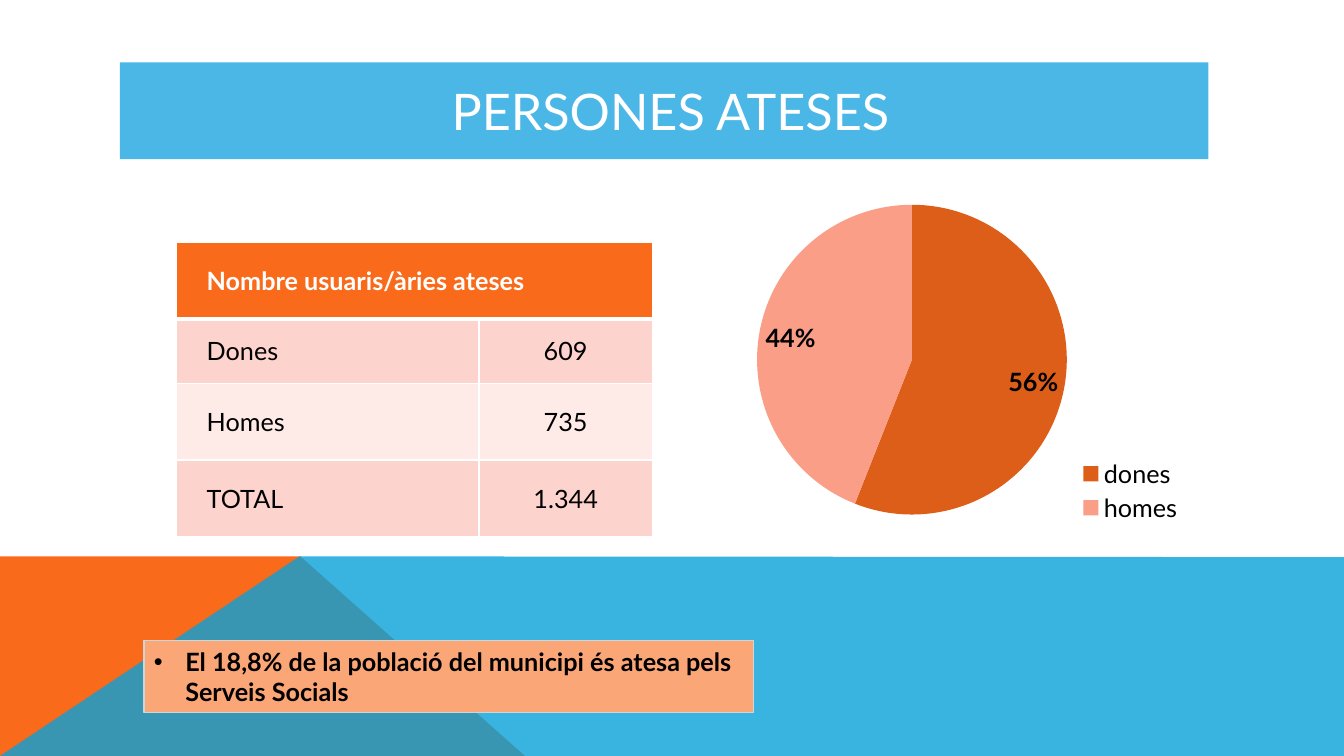
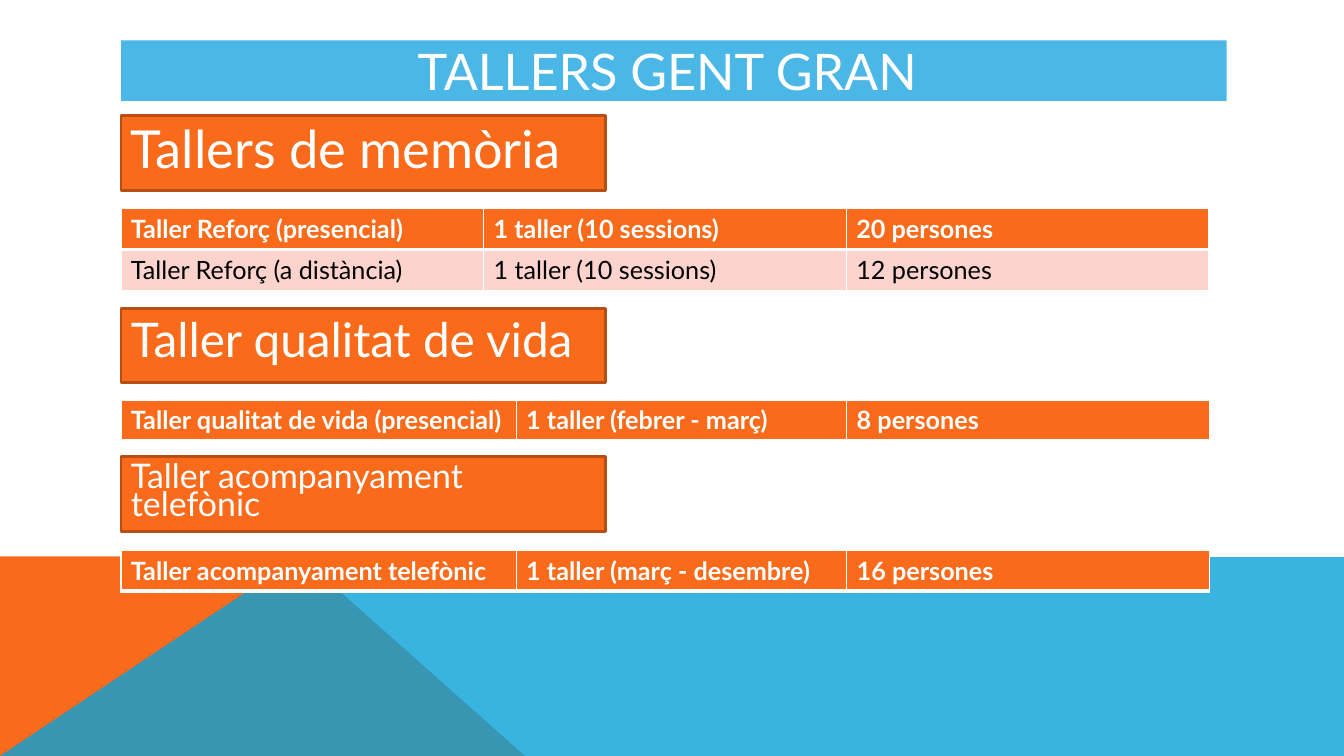
from lxml import etree
from pptx import Presentation
from pptx import util as u
from pptx.chart.data import CategoryChartData
from pptx.dml.color import RGBColor
from pptx.enum import chart as ch, shapes, text
from pptx.oxml import parse_xml
from pptx.oxml.ns import nsdecls, qn

ORANGE = RGBColor(0xF9, 0x6A, 0x1B)
DARK_ORANGE = RGBColor(0xB8, 0x4E, 0x14)
PIE_ORANGE = RGBColor(0xDD, 0x5E, 0x18)
SALMON = RGBColor(0xFA, 0x9E, 0x88)
PEACH = RGBColor(0xFB, 0xA6, 0x76)
PINK = RGBColor(0xFD, 0xD4, 0xCD)
PALE_PINK = RGBColor(0xFE, 0xEB, 0xE8)
SKY = RGBColor(0x4B, 0xB7, 0xE7)
BLUE = RGBColor(0x08, 0xA1, 0xD9)
GREY = RGBColor(0xCD, 0xD7, 0xD9)
WHITE = RGBColor(0xFF, 0xFF, 0xFF)
BLACK = RGBColor(0, 0, 0)
FONT = "Lato"
LEFT, CENTER = text.PP_ALIGN.LEFT, text.PP_ALIGN.CENTER
MIDDLE, TOP = text.MSO_ANCHOR.MIDDLE, text.MSO_ANCHOR.TOP


def write(frame, words, size, color, bold=False, align=LEFT):
    """Fill a text frame with one formatted paragraph and return it."""
    paragraph = frame.paragraphs[0]
    paragraph.alignment = align
    run = paragraph.add_run()
    run.text = words
    for name, value in dict(name=FONT, size=u.Pt(size), bold=bold).items():
        setattr(run.font, name, value)
    run.font.color.rgb = color
    return paragraph


def add_grid(slide, left, top, widths, heights, rows, margin=0.25, anchor=TOP, number_align=LEFT):
    """Add a table with an orange header row, banded body and white borders."""
    frame = slide.shapes.add_table(len(rows), len(widths), u.Cm(left), u.Cm(top),
                                   u.Cm(sum(widths)), u.Cm(sum(heights)))
    grid = frame.table
    for column, width in zip(grid.columns, widths):
        column.width = u.Cm(width)
    for r, (row, height) in enumerate(zip(rows, heights)):
        grid.rows[r].height = u.Cm(height)
        header = r == 0
        for c, words in enumerate(row):
            cell = grid.cell(r, c)
            cell.margin_left = cell.margin_right = u.Cm(margin)
            cell.vertical_anchor = anchor
            cell.fill.solid()
            cell.fill.fore_color.rgb = ORANGE if header else (PALE_PINK, PINK)[r % 2]
            if words:
                write(cell.text_frame, words, 18, WHITE if header else BLACK, header,
                      number_align if c else LEFT)
            properties = cell._tc.get_or_add_tcPr()
            for i, side in enumerate("LRTB"):
                width = 3 if (header and side == "B") or (r == 1 and side == "T") else 1
                properties.insert(i, parse_xml(
                    f'<a:ln{side} {nsdecls("a")} w="{u.Pt(width)}"><a:solidFill>'
                    f'<a:srgbClr val="{WHITE}"/></a:solidFill></a:ln{side}>'))
    return grid


prs = Presentation()
prs.slide_width, prs.slide_height = u.Cm(33.87), u.Cm(19.05)
layout = prs.slide_layouts[5]

# Titles
titles = [
    (" PERSONES ATESES", 3.02, 1.57, 27.43, 2.44),
    ("TALLERS GENT GRAN ", 3.05, 1.02, 27.86, 1.52),
]
slides = []
for words, left, top, width, height in titles:
    slide = prs.slides.add_slide(layout)
    title = slide.shapes.title
    place = dict(left=left, top=top, width=width, height=height)
    for name, value in place.items():
        setattr(title, name, u.Cm(value))
    title.fill.solid()
    title.fill.fore_color.rgb = SKY
    title.text_frame.vertical_anchor = MIDDLE
    title.text_frame.auto_size = text.MSO_AUTO_SIZE.NONE
    write(title.text_frame, words, 36, WHITE, align=CENTER)
    slides.append(slide)
people, workshops = slides

# Bottom bands, drawn once and moved to the shared layout
bands = [
    (ORANGE, 100, [(0, 19.05), (0, 14.02), (7.57, 14.02), (13.23, 19.05)]),
    (BLUE, 80, [(0, 19.05), (7.55, 14.02), (33.87, 14.04), (33.87, 19.05)]),
]
for i, (color, opacity, points) in enumerate(bands):
    corners = [(u.Cm(x), u.Cm(y)) for x, y in points]
    builder = people.shapes.build_freeform(*corners[0])
    builder.add_line_segments(corners[1:], close=True)
    band = builder.convert_to_shape()
    band.shadow.inherit = False
    band.line.fill.background()
    band.fill.solid()
    band.fill.fore_color.rgb = color
    tint = band.element.spPr.find(".//" + qn("a:srgbClr"))
    etree.SubElement(tint, qn("a:alpha"), val=str(opacity * 1000))
    layout.shapes.element.insert(2 + i, band.element)

# Tables
users = add_grid(people, 4.45, 6.1, [7.62, 4.37], [1.93, 1.63, 1.93, 1.93], [
    ("Nombre usuaris/àries ateses", ""),
    ("Dones", "609"),
    ("Homes", "735"),
    ("TOTAL", "1.344"),
], margin=0.76, anchor=MIDDLE, number_align=CENTER)
users.cell(0, 0).merge(users.cell(0, 1))

EVEN, UNEVEN = [9.14, 9.14, 9.14], [9.96, 8.33, 9.14]
sessions = [
    (5.26, EVEN, [("Taller Reforç (presencial)", "1 taller (10 sessions)", "20 persones"),
                  ("Taller Reforç (a distància)", "1 taller (10 sessions)", "12 persones")]),
    (10.08, UNEVEN, [("Taller qualitat de vida (presencial)", "1 taller (febrer - març)",
                      "8 persones")]),
    (13.87, UNEVEN, [("Taller acompanyament telefònic", "1 taller (març - desembre)",
                      "16 persones")]),
]
for top, widths, rows in sessions:
    add_grid(workshops, 3.05, top, widths, [1.03] * len(rows), rows)

# Pie of women and men
data = CategoryChartData()
data.categories = ["dones", "homes"]
data.add_series("Series 1", (56, 44))
pie = people.shapes.add_chart(ch.XL_CHART_TYPE.PIE, u.Cm(16.43), u.Cm(3.56),
                              u.Cm(16.18), u.Cm(10.01), data).chart
pie.has_title = False
pie.has_legend = True
pie.legend.position = ch.XL_LEGEND_POSITION.RIGHT
pie.legend.include_in_layout = False
plot = pie.plots[0]
plot.vary_by_categories = True
plot.has_data_labels = True
labels = plot.data_labels
label_format = dict(show_percentage=True, show_value=False, number_format="0%",
                    number_format_is_linked=False,
                    position=ch.XL_LABEL_POSITION.BEST_FIT)
for name, value in label_format.items():
    setattr(labels, name, value)
for font, bold in ((pie.font, False), (pie.legend.font, False), (labels.font, True)):
    font.name, font.size, font.bold = FONT, u.Pt(18), bold
    font.color.rgb = BLACK
for i, color in enumerate((PIE_ORANGE, SALMON)):
    sector = plot.series[0].points[i].format
    sector.fill.solid()
    sector.fill.fore_color.rgb = color
    sector.line.fill.background()

plot_area = pie._chartSpace.chart.plotArea
for old in plot_area.findall(qn("c:layout")):
    plot_area.remove(old)
legend = pie.legend._element
for old in legend.findall(qn("c:layout")):
    legend.remove(old)
for parent, index, target, box in (
        (plot_area, 0, '<c:layoutTarget val="inner"/>', (0.15, 0.16, 0.51, 0.78)),
        (legend, 1, "", (0.65, 0.79, 0.19, 0.18))):
    sizes = "".join(f'<c:{k} val="{v}"/>' for k, v in zip("xywh", box))
    parent.insert(index, parse_xml(
        f'<c:layout {nsdecls("c")}><c:manualLayout>{target}<c:xMode val="edge"/>'
        f'<c:yMode val="edge"/>{sizes}</c:manualLayout></c:layout>'))

# Note and workshop headings
NOTE = dict(fill=PEACH, line=GREY, weight=0.75, color=BLACK, bold=True)
HEADING = dict(fill=ORANGE, line=DARK_ORANGE, weight=2, color=WHITE, bold=False)
boxes = [
    (people, NOTE, 3.63, 16.15, 15.37, 1.8, 18, 1,
     "El 18,8% de la població del municipi és atesa pels Serveis Socials"),
    (workshops, HEADING, 3.05, 2.92, 12.22, 1.88, 37.4, 0.8, "Tallers de memòria"),
    (workshops, HEADING, 3.05, 7.77, 12.22, 1.88, 34.1, 0.7, "Taller qualitat de vida"),
    (workshops, HEADING, 3.05, 11.51, 12.22, 1.88, 24.2, 0.7, "Taller acompanyament telefònic"),
]
for slide, style, left, top, width, height, size, spacing, words in boxes:
    box = slide.shapes.add_shape(shapes.MSO_SHAPE.RECTANGLE, u.Cm(left), u.Cm(top),
                                 u.Cm(width), u.Cm(height))
    box.shadow.inherit = False
    box.fill.solid()
    box.fill.fore_color.rgb = style["fill"]
    box.line.color.rgb = style["line"]
    box.line.width = u.Pt(style["weight"])
    box.text_frame.word_wrap = True
    box.text_frame.vertical_anchor = MIDDLE
    paragraph = write(box.text_frame, words, size, style["color"], style["bold"])
    paragraph.line_spacing = spacing
    if style is NOTE:
        properties = paragraph._p.get_or_add_pPr()
        properties.set("marL", str(u.Cm(0.79)))
        properties.set("indent", str(-u.Cm(0.79)))
        etree.SubElement(properties, qn("a:buFont"), typeface="Arial")
        etree.SubElement(properties, qn("a:buChar"), char="•")

prs.save("out.pptx")
